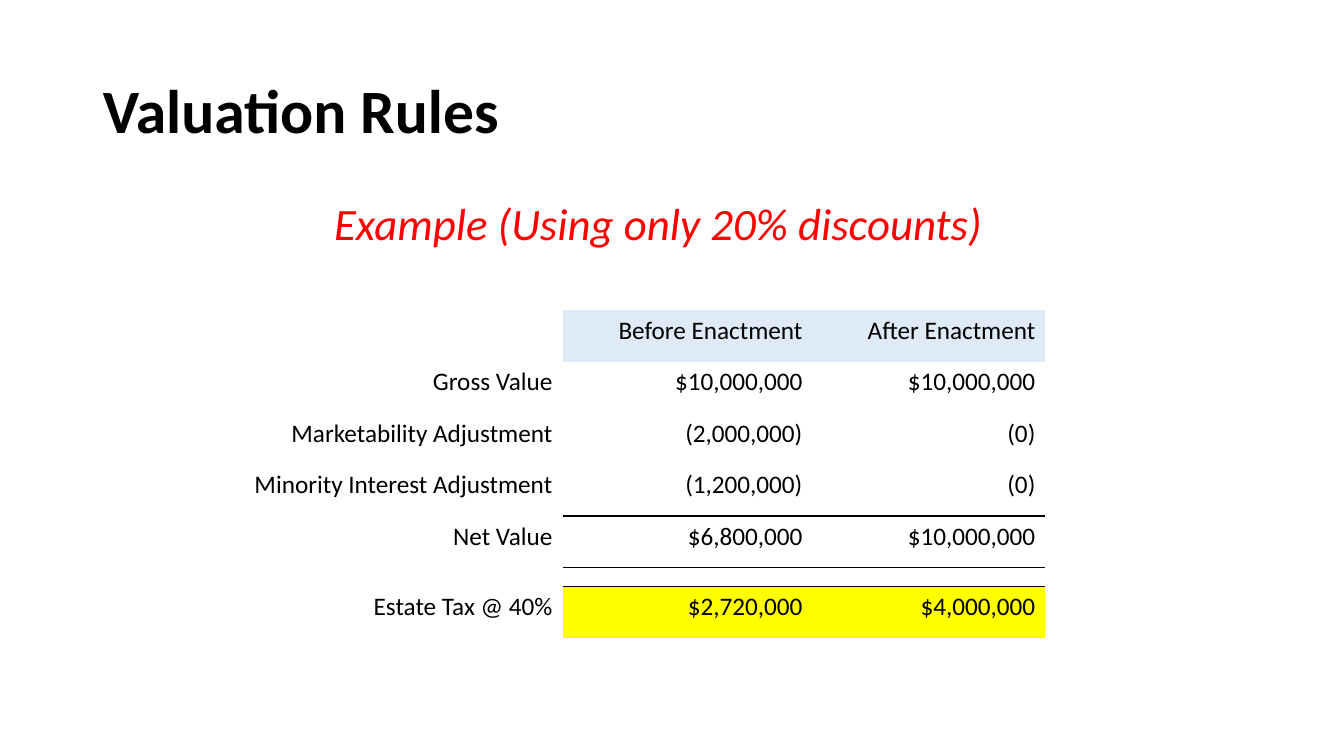
"""Build the Valuation Rules slide with its discount example table."""
from dataclasses import dataclass

from lxml import etree
from pptx import Presentation
from pptx.dml.color import RGBColor
from pptx.enum import text
from pptx.oxml.ns import qn
from pptx.util import Emu, Pt

EMU_PER_PX = 9144
NO_GRID_STYLE = "{2D5ABB26-0587-4C30-8999-92F81FD0307C}"
COLUMN_WIDTHS = (382, 248, 231)
ROW_HEIGHT, SPACER_HEIGHT = 51, 19
ROWS = (
    ("", "Before Enactment", "After Enactment"),
    ("Gross Value", "$10,000,000", "$10,000,000"),
    ("Marketability Adjustment", "(2,000,000)", "(0)"),
    ("Minority Interest Adjustment", "(1,200,000)", "(0)"),
    ("Net Value", "$6,800,000", "$10,000,000"),
    ("", "", ""),
    ("Estate Tax @ 40%", "$2,720,000", "$4,000,000"),
)
HEADER_ROW, NET_ROW, SPACER_ROW, TAX_ROW = 0, 4, 5, 6
RULED_ABOVE = (NET_ROW, SPACER_ROW, TAX_ROW)


@dataclass(frozen=True)
class Theme:
    """Colours, font and type sizes of the slide."""
    font: str = "Calibri"
    ink: str = "000000"
    accent: str = "FF0000"
    header: str = "DEEBF7"
    highlight: str = "FFFF00"
    title_size: int = 44
    subtitle_size: int = 32
    table_size: int = 18
    spacer_size: int = 6
    rule_width: int = 1


THEME = Theme()


def px(length):
    """Turn pixels into EMU."""
    return Emu(length * EMU_PER_PX)


def write(frame, words, *, size, color=THEME.ink, align=text.PP_ALIGN.LEFT,
          bold=False, italic=False, line_spacing=None):
    """Write one formatted paragraph into a text frame."""
    paragraph = frame.paragraphs[0]
    paragraph.alignment = align
    paragraph.line_spacing = line_spacing
    run = paragraph.add_run()
    run.text = words
    run.font.name = THEME.font
    run.font.size = Pt(size)
    run.font.bold = bold
    run.font.italic = italic
    run.font.color.rgb = RGBColor.from_string(color)


def add_title(slide, words):
    """Place and format the slide title."""
    title = slide.shapes.title
    title.left, title.top, title.width, title.height = map(px, (92, 40, 1150, 145))
    title.text_frame.vertical_anchor = text.MSO_ANCHOR.MIDDLE
    title.text_frame.auto_size = text.MSO_AUTO_SIZE.NONE
    write(title.text_frame, words, size=THEME.title_size, bold=True, line_spacing=0.9)


def add_subtitle(slide, words):
    """Add the centred example heading."""
    box = slide.shapes.add_textbox(px(203), px(187), px(900), px(67))
    box.text_frame.word_wrap = True
    box.text_frame.vertical_anchor = text.MSO_ANCHOR.MIDDLE
    write(box.text_frame, words, size=THEME.subtitle_size, color=THEME.accent,
          align=text.PP_ALIGN.CENTER, italic=True)


def add_border(cell, side):
    """Draw a solid rule on one side of a cell."""
    properties = cell._tc.get_or_add_tcPr()
    line = etree.SubElement(properties, qn(f"a:ln{side}"), w=str(Pt(THEME.rule_width)))
    fill = etree.SubElement(line, qn("a:solidFill"))
    etree.SubElement(fill, qn("a:srgbClr"), val=THEME.ink)


def format_cell(cell, row, column):
    """Give a cell its rules, fill and margins."""
    is_value = column > 0
    if is_value and row in RULED_ABOVE:
        add_border(cell, "T")
    if is_value and row + 1 in RULED_ABOVE:
        add_border(cell, "B")
    color = {HEADER_ROW: THEME.header, TAX_ROW: THEME.highlight}.get(row)
    if is_value and color:
        cell.fill.solid()
        cell.fill.fore_color.rgb = RGBColor.from_string(color)
    else:
        cell.fill.background()
    if row == SPACER_ROW:
        cell.margin_top = cell.margin_bottom = 0


def fill_cell(cell, words, size):
    """Write a right-aligned entry, or size the empty paragraph."""
    if words:
        write(cell.text_frame, words, size=size, align=text.PP_ALIGN.RIGHT)
    else:
        paragraph = cell.text_frame.paragraphs[0]
        etree.SubElement(paragraph._p, qn("a:endParaRPr"), sz=str(size * 100))


def add_valuation_table(slide):
    """Add the comparison of values before and after enactment."""
    heights = [SPACER_HEIGHT if row == SPACER_ROW else ROW_HEIGHT
               for row in range(len(ROWS))]
    frame = slide.shapes.add_table(len(ROWS), len(COLUMN_WIDTHS), px(176), px(308),
                                   px(sum(COLUMN_WIDTHS)), px(sum(heights)))
    table = frame.table
    table.first_row = table.horz_banding = False
    table._tbl.tblPr.find(qn("a:tableStyleId")).text = NO_GRID_STYLE
    for column, width in zip(table.columns, COLUMN_WIDTHS):
        column.width = px(width)
    for row, (entries, height) in enumerate(zip(ROWS, heights)):
        table.rows[row].height = px(height)
        size = THEME.spacer_size if row == SPACER_ROW else THEME.table_size
        for column, words in enumerate(entries):
            cell = table.cell(row, column)
            format_cell(cell, row, column)
            fill_cell(cell, words, size)


def main():
    """Build and save the presentation."""
    presentation = Presentation()
    presentation.slide_width, presentation.slide_height = px(1333), px(750)
    slide = presentation.slides.add_slide(presentation.slide_layouts[5])
    add_title(slide, "Valuation Rules")
    add_valuation_table(slide)
    add_subtitle(slide, "Example (Using only 20% discounts)")
    presentation.save("out.pptx")


if __name__ == "__main__":
    main()
